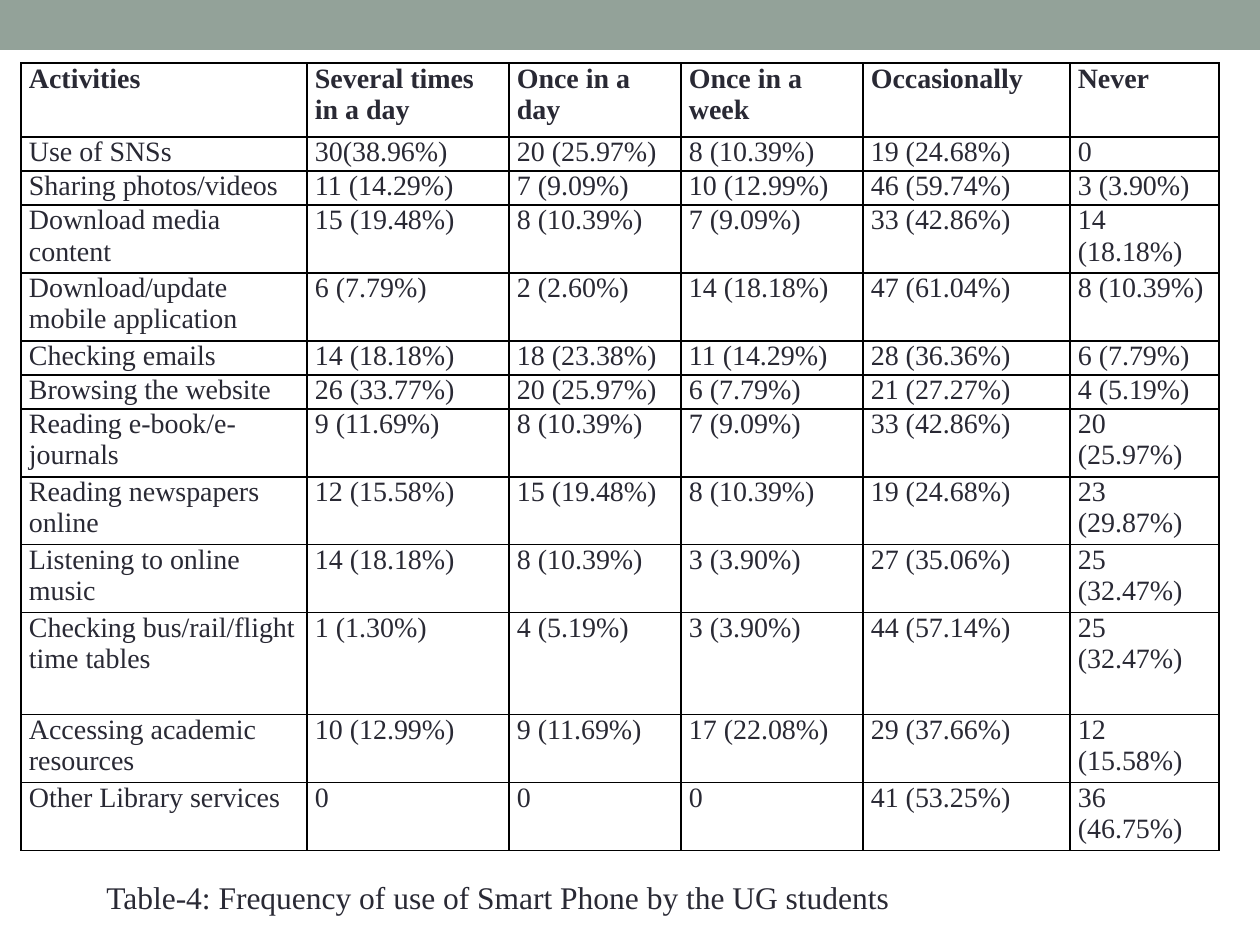
from dataclasses import dataclass

from lxml.etree import SubElement
from pptx import Presentation
from pptx.dml.color import RGBColor
from pptx.enum.shapes import MSO_SHAPE as Shape
from pptx.enum.text import MSO_AUTO_SIZE as AutoSize
from pptx.oxml import parse_xml
from pptx.oxml.ns import nsdecls, qn
from pptx.util import Emu, Pt


@dataclass(frozen=True)
class Theme:
    """Colours and type sizes of the slide."""
    font: str = "Times New Roman"
    ink: str = "292934"
    band: str = "93A299"
    rule: str = "000000"
    rule_points: int = 1
    table_size: int = 16
    caption_size: int = 18


THEME = Theme()
EMU_PER_PX = 914400 / 126
COLUMN_WIDTHS = (286, 202, 172, 182, 207, 149)
HEADER_HEIGHT = 74
LINE_HEIGHT = 34
CELL_INSET = 8
CAPTION = "Table-4: Frequency of use of Smart Phone by the UG students"
HEADER = ("Activities", "Several times in a day", "Once in a day",
          "Once in a week", "Occasionally", "Never")
ACTIVITIES = (
    (1, "Use of SNSs", "30(38.96%)", "20 (25.97%)", "8 (10.39%)",
     "19 (24.68%)", "0"),
    (1, "Sharing photos/videos", "11 (14.29%)", "7 (9.09%)", "10 (12.99%)",
     "46 (59.74%)", "3 (3.90%)"),
    (2, "Download media content", "15 (19.48%)", "8 (10.39%)", "7 (9.09%)",
     "33 (42.86%)", "14 (18.18%)"),
    (2, "Download/update mobile application", "6 (7.79%)", "2 (2.60%)",
     "14 (18.18%)", "47 (61.04%)", "8 (10.39%)"),
    (1, "Checking emails", "14 (18.18%)", "18 (23.38%)", "11 (14.29%)",
     "28 (36.36%)", "6 (7.79%)"),
    (1, "Browsing the website", "26 (33.77%)", "20 (25.97%)", "6 (7.79%)",
     "21 (27.27%)", "4 (5.19%)"),
    (2, "Reading e-book/e-journals", "9 (11.69%)", "8 (10.39%)", "7 (9.09%)",
     "33 (42.86%)", "20 (25.97%)"),
    (2, "Reading newspapers online", "12 (15.58%)", "15 (19.48%)",
     "8 (10.39%)", "19 (24.68%)", "23 (29.87%)"),
    (2, "Listening to online music", "14 (18.18%)", "8 (10.39%)", "3 (3.90%)",
     "27 (35.06%)", "25 (32.47%)"),
    (3, "Checking bus/rail/flight time tables", "1 (1.30%)", "4 (5.19%)",
     "3 (3.90%)", "44 (57.14%)", "25 (32.47%)"),
    (2, "Accessing academic resources", "10 (12.99%)", "9 (11.69%)",
     "17 (22.08%)", "29 (37.66%)", "12 (15.58%)"),
    (2, "Other Library services", "0", "0", "0", "41 (53.25%)",
     "36 (46.75%)"),
)


def px(length):
    """Turn whole pixels into EMU."""
    return Emu(round(length * EMU_PER_PX))


def write_text(frame, text, size, bold=False):
    """Set one paragraph of text and format its run."""
    frame.text = text
    font = frame.paragraphs[0].runs[0].font
    font.name = THEME.font
    font.size = Pt(size)
    font.bold = bold
    font.color.rgb = RGBColor.from_string(THEME.ink)


def add_band(slide, left, top, width, height):
    """Add the coloured band along the top edge."""
    band = slide.shapes.add_shape(Shape.RECTANGLE, px(left), px(top), px(width), px(height))
    band.shadow.inherit = False
    band.fill.solid()
    band.fill.fore_color.rgb = RGBColor.from_string(THEME.band)
    band.line.fill.background()


def add_borders(cell):
    """Rule all four sides of a cell."""
    properties = cell._tc.get_or_add_tcPr()
    for position, side in enumerate(("lnL", "lnR", "lnT", "lnB")):
        line = parse_xml(f'<a:{side} {nsdecls("a")} w="{Pt(THEME.rule_points)}"/>')
        fill = SubElement(line, qn("a:solidFill"))
        SubElement(fill, qn("a:srgbClr"), val=THEME.rule)
        properties.insert(position, line)


def format_cell(cell, text, bold):
    """Fill one table cell with text, insets and rules."""
    cell.margin_left = cell.margin_right = px(CELL_INSET)
    cell.margin_top = cell.margin_bottom = 0
    cell.fill.background()
    write_text(cell.text_frame, text, THEME.table_size, bold)
    add_borders(cell)


def add_frequency_table(slide, left, top):
    """Add the table with row heights set by their line counts."""
    heights = [HEADER_HEIGHT] + [lines * LINE_HEIGHT for lines, *_ in ACTIVITIES]
    records = [HEADER] + [texts for _, *texts in ACTIVITIES]
    table = slide.shapes.add_table(
        len(records), len(HEADER), px(left), px(top),
        px(sum(COLUMN_WIDTHS)), px(sum(heights))).table
    table.first_row = table.horz_banding = False
    for column, width in zip(table.columns, COLUMN_WIDTHS):
        column.width = px(width)
    for row, height, texts in zip(table.rows, heights, records):
        row.height = px(height)
        for cell, text in zip(row.cells, texts):
            format_cell(cell, text, bold=texts is HEADER)


def add_caption(slide, left, top, width, height):
    """Add the caption below the table."""
    box = slide.shapes.add_textbox(px(left), px(top), px(width), px(height))
    box.text_frame.word_wrap = True
    box.text_frame.auto_size = AutoSize.SHAPE_TO_FIT_TEXT
    write_text(box.text_frame, CAPTION, THEME.caption_size)


def main():
    """Build the slide and save the deck."""
    deck = Presentation()
    deck.slide_width, deck.slide_height = px(1260), px(945)
    page = deck.slides.add_slide(deck.slide_layouts.get_by_name("Blank"))
    add_band(page, 0, 0, 1260, 50)
    add_frequency_table(page, 21, 63)
    add_caption(page, 94, 872, 935, 50)
    deck.save("out.pptx")


if __name__ == "__main__":
    main()
